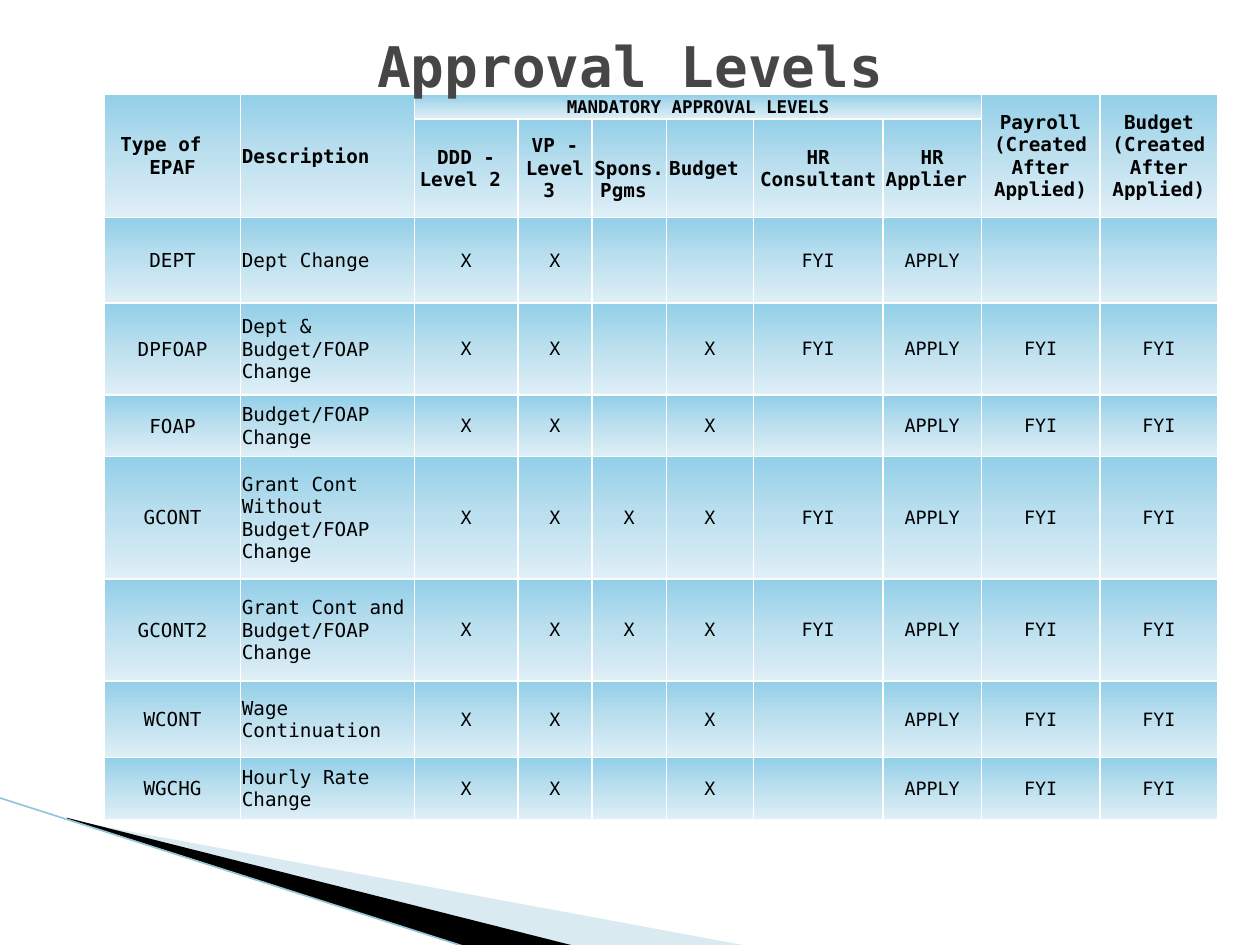
from lxml.etree import SubElement
from pptx import Presentation
from pptx.dml.color import RGBColor
from pptx.enum.shapes import MSO_CONNECTOR
from pptx.enum.text import MSO_ANCHOR, MSO_AUTO_SIZE, PP_ALIGN
from pptx.oxml.ns import qn
from pptx.util import Inches, Pt

FONT = "DejaVu Sans Mono"
BLACK = RGBColor(0x00, 0x00, 0x00)
WHITE = RGBColor(0xFF, 0xFF, 0xFF)
GREY = RGBColor(0x46, 0x46, 0x46)
PALE = RGBColor(0xA0, 0xCB, 0xDC)
EDGE = RGBColor(0x97, 0xC5, 0xD8)
GRADIENT = {
    0: RGBColor(0x92, 0xCF, 0xE8),
    50: RGBColor(0xBD, 0xE0, 0xEF),
    100: RGBColor(0xDF, 0xEF, 0xF6),
}

prs = Presentation()
prs.slide_width, prs.slide_height = Inches(10), Inches(7.5)
s = prs.slides.add_slide(prs.slide_layouts[5])


def across(pct):
    return round(prs.slide_width * pct / 100)


def down(pct):
    return round(prs.slide_height * pct / 100)


wedges = [
    (PALE, 40, [(5.5, 86.8), (59.5, 100.13), (45.6, 100.13), (5.5, 86.67)]),
    (BLACK, 100, [(5.3, 86.53), (45.7, 100.13), (37.2, 100.27), (5.4, 86.67)]),
]
for color, opacity, corners in wedges:
    points = [(across(x), down(y)) for x, y in corners]
    builder = s.shapes.build_freeform(*points[0], scale=1)
    builder.add_line_segments(points[1:], close=True)
    sp = builder.convert_to_shape()
    sp.shadow.inherit = False
    sp.line.fill.background()
    sp.fill.solid()
    sp.fill.fore_color.rgb = color
    if opacity < 100:
        rgb = sp._element.spPr.find(qn("a:solidFill")).find(qn("a:srgbClr"))
        SubElement(rgb, qn("a:alpha"), val=str(opacity * 1000))

edge = s.shapes.add_connector(
    MSO_CONNECTOR.STRAIGHT, across(-0.1), down(84.4), across(37.1), down(100.27))
edge.line.color.rgb = EDGE
edge.line.width = Pt(0.95)
SubElement(edge._element.spPr, qn("a:effectLst"))

X, FYI, APPLY = "X", "FYI", "APPLY"
rows = [
    ["Type of  \nEPAF", "Description", "MANDATORY APPROVAL LEVELS", "", "", "", "", "",
     "Payroll (Created After Applied)", "Budget (Created After Applied)"],
    ["", "", "DDD - Level 2 ", "VP - Level 3 ", " Spons. Pgms ", "Budget ",
     "HR Consultant ", "HR\nApplier ", "", ""],
    ["DEPT", "Dept Change", X, X, "", "", FYI, APPLY, "", ""],
    ["DPFOAP", "Dept & Budget/FOAP Change", X, X, "", X, FYI, APPLY, FYI, FYI],
    ["FOAP", "Budget/FOAP Change", X, X, "", X, "", APPLY, FYI, FYI],
    ["GCONT", "Grant Cont Without Budget/FOAP Change", X, X, X, X, FYI, APPLY, FYI, FYI],
    ["GCONT2", "Grant Cont and Budget/FOAP Change", X, X, X, X, FYI, APPLY, FYI, FYI],
    ["WCONT", "Wage Continuation", X, X, "", X, "", APPLY, FYI, FYI],
    ["WGCHG", "Hourly Rate Change", X, X, "", X, "", APPLY, FYI, FYI],
]
col_widths = [10.8, 13.8, 8.2, 5.9, 5.9, 6.9, 10.3, 7.8, 9.4, 9.4]
row_heights = [2.6, 10.4, 9.07, 9.73, 6.53, 12.93, 10.8, 8.13, 6.53]
cell_format = {
    "margin_left": Inches(0.01), "margin_right": Inches(0.01),
    "margin_top": Inches(0.01), "margin_bottom": 0,
    "vertical_anchor": MSO_ANCHOR.MIDDLE,
}

frame = s.shapes.add_table(
    len(rows), len(col_widths), across(8.3), down(10),
    across(sum(col_widths)), down(sum(row_heights)))
table = frame.table
for column, width in zip(table.columns, col_widths):
    column.width = across(width)
for row, height in zip(table.rows, row_heights):
    row.height = down(height)

for i, texts in enumerate(rows):
    for j, text in enumerate(texts):
        cell = table.cell(i, j)
        for name, value in cell_format.items():
            setattr(cell, name, value)
        size = 11 if i < 2 or j < 2 else 10.5
        if (i, j) == (0, 2):
            size = 10
        cell.text = text
        for p in cell.text_frame.paragraphs:
            p.alignment = PP_ALIGN.LEFT if j == 1 else PP_ALIGN.CENTER
            for r in p.runs:
                font = {"name": FONT, "size": Pt(size), "bold": i < 2}
                for name, value in font.items():
                    setattr(r.font, name, value)
                r.font.color.rgb = BLACK
            if not p.runs:
                SubElement(p._p, qn("a:endParaRPr"), sz="1000")

        tcPr = cell._tc.get_or_add_tcPr()
        for side in ("lnL", "lnR", "lnT", "lnB"):
            ln = SubElement(tcPr, qn(f"a:{side}"), w=str(Pt(1)))
            solid = SubElement(ln, qn("a:solidFill"))
            SubElement(solid, qn("a:srgbClr"), val=str(WHITE))
        grad = SubElement(tcPr, qn("a:gradFill"), rotWithShape="1")
        stops = SubElement(grad, qn("a:gsLst"))
        for pos, color in GRADIENT.items():
            stop = SubElement(stops, qn("a:gs"), pos=str(pos * 1000))
            SubElement(stop, qn("a:srgbClr"), val=str(color))
        SubElement(grad, qn("a:lin"), ang="5400000", scaled="0")

table.cell(0, 2).merge(table.cell(0, 7))
for j in (0, 1, 8, 9):
    table.cell(0, j).merge(table.cell(1, j))

title = s.shapes.title
title.left, title.top = across(5.8), down(4.13)
title.width, title.height = across(85.8), down(5.6)
tf = title.text_frame
tf.text = " Approval Levels"
tf.auto_size = MSO_AUTO_SIZE.NONE
tf.word_wrap = True
tf.vertical_anchor = MSO_ANCHOR.MIDDLE
p = tf.paragraphs[0]
p.alignment = PP_ALIGN.CENTER
r = p.runs[0]
for name, value in {"name": FONT, "size": Pt(32), "bold": True}.items():
    setattr(r.font, name, value)
r.font.color.rgb = GREY
s.shapes._spTree.append(title._element)

prs.save("out.pptx")
